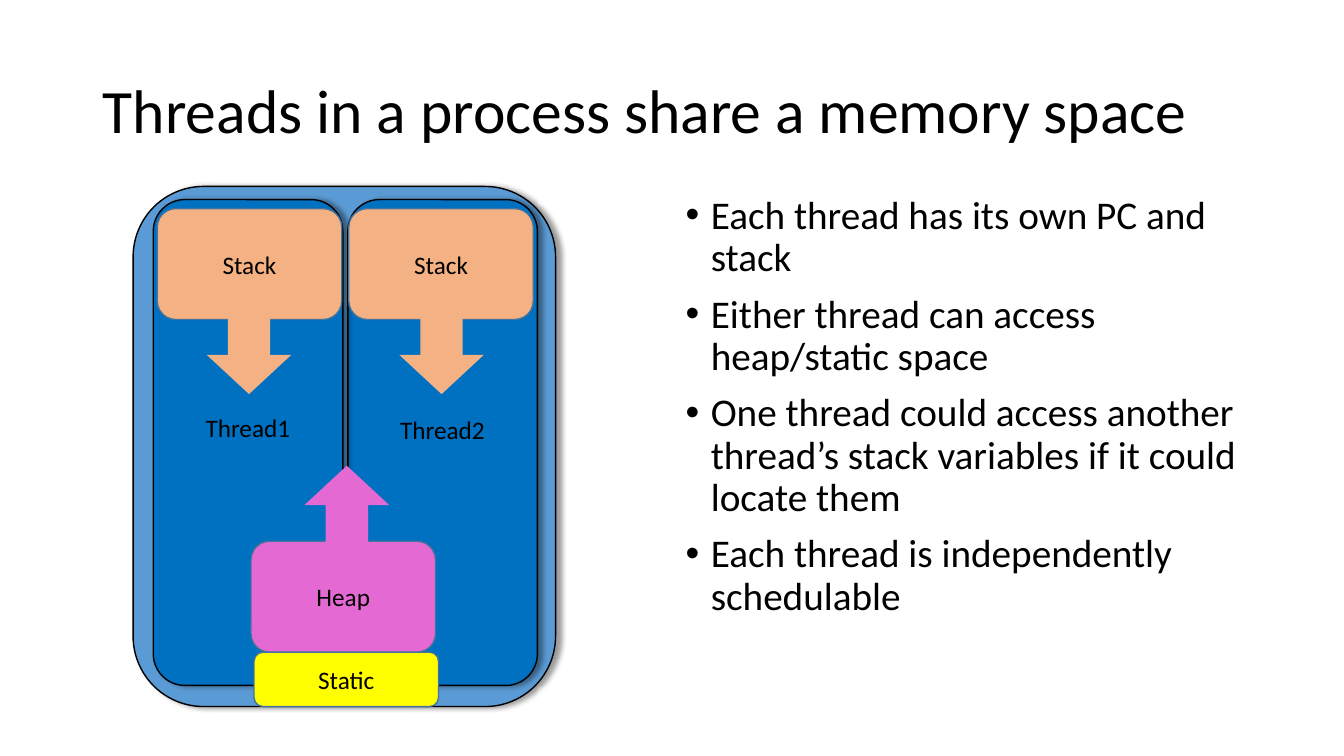
from dataclasses import dataclass

from lxml.etree import SubElement
from pptx import Presentation
from pptx.dml.color import RGBColor
from pptx.enum.shapes import MSO_SHAPE as Preset
from pptx.enum.text import MSO_ANCHOR as Anchor, MSO_AUTO_SIZE as AutoSize, PP_ALIGN as Align
from pptx.oxml.ns import qn
from pptx.util import Inches, Pt

COLORS = {
    "text": "000000",
    "process": "5B9BD5",
    "thread": "0070C0",
    "stack": "F4B183",
    "heap": "E569D3",
    "static": "FFFF00",
    "outline": "43739E",
}
FONT = "Calibri"
TITLE = "Threads in a process share a memory space"
POINTS = [
    "Each thread has its own PC and stack",
    "Either thread can access heap/static space",
    "One thread could access another thread’s stack variables if it could locate them",
    "Each thread is independently schedulable",
]


@dataclass
class Region:
    left: float
    top: float
    width: float
    height: float
    color: str
    label: str = ""
    shadow: bool = False


@dataclass
class Growth:
    left: float
    top: float
    color: str
    rotation: int = 0


@dataclass
class ThreadLabel:
    left: float
    top: float
    text: str


def rgb(color: str) -> RGBColor:
    return RGBColor.from_string(COLORS[color])


def format_text(frame, size: int, align) -> None:
    for paragraph in frame.paragraphs:
        paragraph.alignment = align
        for run in paragraph.runs:
            run.font.name = FONT
            run.font.size = Pt(size)
            run.font.color.rgb = rgb("text")


def place(shape, left: float, top: float, width: float, height: float) -> None:
    shape.left, shape.top = Inches(left), Inches(top)
    shape.width, shape.height = Inches(width), Inches(height)


def add_shadow(shape) -> None:
    effects = shape._element.spPr.find(qn("a:effectLst"))
    shadow = SubElement(effects, qn("a:outerShdw"), blurRad=str(Pt(4)), dist=str(Pt(3)),
                        dir="0", algn="l", rotWithShape="0")
    shade = SubElement(shadow, qn("a:srgbClr"), val=COLORS["text"])
    SubElement(shade, qn("a:alpha"), val="40000")


def draw_region(slide, region: Region) -> None:
    box = slide.shapes.add_shape(
        Preset.ROUNDED_RECTANGLE, Inches(region.left), Inches(region.top),
        Inches(region.width), Inches(region.height))
    box.fill.solid()
    box.fill.fore_color.rgb = rgb(region.color)
    box.line.color.rgb = rgb("text" if region.shadow else "outline")
    box.line.width = Pt(1)
    box.shadow.inherit = False
    if region.shadow:
        add_shadow(box)
    if region.label:
        box.text_frame.text = region.label
        box.text_frame.vertical_anchor = Anchor.MIDDLE
        format_text(box.text_frame, 18, Align.CENTER)


def draw_growth(slide, growth: Growth) -> None:
    arrow = slide.shapes.add_shape(
        Preset.DOWN_ARROW, Inches(growth.left), Inches(growth.top), Inches(0.84), Inches(0.78))
    arrow.rotation = growth.rotation
    arrow.fill.solid()
    arrow.fill.fore_color.rgb = rgb(growth.color)
    arrow.line.fill.background()
    arrow.shadow.inherit = False


def draw_thread_label(slide, label: ThreadLabel) -> None:
    caption = slide.shapes.add_textbox(
        Inches(label.left), Inches(label.top), Inches(1.05), Inches(0.4))
    caption.text_frame.word_wrap = False
    caption.text_frame.auto_size = AutoSize.SHAPE_TO_FIT_TEXT
    caption.text_frame.text = label.text
    format_text(caption.text_frame, 18, Align.LEFT)


def fill_title(title) -> None:
    place(title, 0.92, 0.4, 11.5, 1.45)
    frame = title.text_frame
    frame.text = TITLE
    frame.auto_size = AutoSize.NONE
    frame.vertical_anchor = Anchor.MIDDLE
    frame.paragraphs[0].line_spacing = 0.9
    format_text(frame, 44, Align.LEFT)


def fill_points(points) -> None:
    place(points, 6.7, 1.89, 5.74, 4.76)
    frame = points.text_frame
    frame.text = "\n".join(POINTS)
    frame.auto_size = AutoSize.NONE
    for paragraph in frame.paragraphs:
        paragraph.line_spacing = 0.9
        paragraph.space_before = Pt(10)
        properties = paragraph._p.get_or_add_pPr()
        properties.set("marL", str(Inches(0.25)))
        properties.set("indent", str(-Inches(0.25)))
        SubElement(properties, qn("a:buFont"), typeface="Arial")
        SubElement(properties, qn("a:buChar"), char="•")
    format_text(frame, 28, Align.LEFT)


REGIONS = [
    Region(1.32, 1.85, 4.19, 5.16, "process", shadow=True),
    Region(3.45, 1.98, 1.88, 4.82, "thread", shadow=True),
    Region(1.52, 1.98, 1.88, 4.82, "thread", shadow=True),
    Region(1.56, 2.07, 1.83, 1.1, "stack", "Stack"),
    Region(3.46, 2.07, 1.83, 1.1, "stack", "Stack"),
    Region(2.52, 6.47, 1.83, 0.54, "static", "Static"),
    Region(2.49, 5.37, 1.83, 1.1, "heap", "Heap"),
]
GROWTHS = [
    Growth(2.05, 3.13, "stack"),
    Growth(3.96, 3.13, "stack"),
    Growth(3.02, 4.62, "heap", 180),
]
THREAD_LABELS = [ThreadLabel(1.94, 4.04, "Thread1"), ThreadLabel(3.87, 4.06, "Thread2")]


def main() -> None:
    deck = Presentation()
    deck.slide_width, deck.slide_height = Inches(13.33), Inches(7.5)
    slide = deck.slides.add_slide(deck.slide_layouts[1])
    fill_title(slide.shapes.title)
    fill_points(slide.placeholders[1])
    for region in REGIONS:
        draw_region(slide, region)
    for growth in GROWTHS:
        draw_growth(slide, growth)
    for label in THREAD_LABELS:
        draw_thread_label(slide, label)
    deck.save("out.pptx")


if __name__ == "__main__":
    main()
